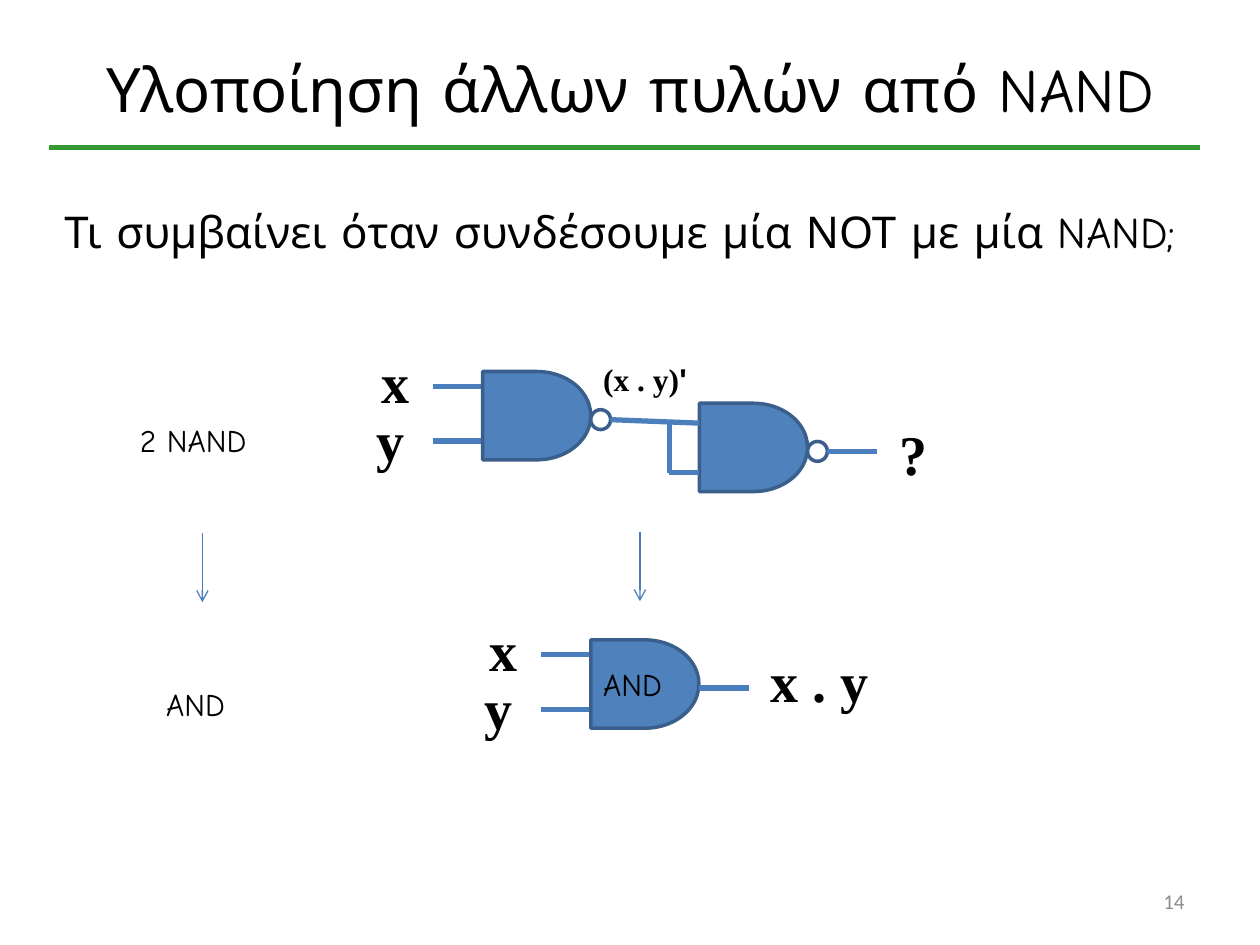
"""Build the slide on making an AND gate from two NAND gates."""
import pptx
import pptx.dml.color
import pptx.enum.shapes
import pptx.enum.text
import pptx.util
from pptx.oxml.xmlchemy import OxmlElement

Cm = pptx.util.Cm
RGBColor = pptx.dml.color.RGBColor
Shape = pptx.enum.shapes.MSO_SHAPE
Align = pptx.enum.text.PP_ALIGN
Anchor = pptx.enum.text.MSO_ANCHOR

BLACK = RGBColor(0x00, 0x00, 0x00)
WHITE = RGBColor(0xFF, 0xFF, 0xFF)
GRAY = RGBColor(0x8C, 0x8C, 0x8C)
GREEN = RGBColor(0x33, 0x99, 0x33)
GATE_FILL = RGBColor(0x4F, 0x81, 0xBD)
GATE_EDGE = RGBColor(0x3A, 0x5F, 0x8C)
WIRE = RGBColor(0x4B, 0x7E, 0xBC)

COMIC, SERIF = "Comic Neue", "Times New Roman"

HEADINGS = [
    ("Υλοποίηση άλλων πυλών από NAND", (1.27, 0.76, 22.86, 2.01), COMIC, 35, BLACK, Align.CENTER),
    ("Τι συμβαίνει όταν συνδέσουμε μία ΝΟΤ με μία NAND;", (0.99, 3.76, 23.01, 1.78),
     COMIC, 25, BLACK, Align.CENTER),
    ("14", (18.21, 17.65, 5.92, 1.02), "Calibri", 12, GRAY, Align.RIGHT),
]
CAPTIONS = [
    ("2 NAND", (2.57, 8.36, 3.05, 1.02)),
    ("AND", (3.1, 13.69, 1.96, 1.02)),
    ("AND", (11.91, 13.28, 1.96, 1.02)),
]
ARROWS = [((4.08, 10.74), (4.08, 12.14)), ((12.9, 10.72), (12.9, 12.12))]
NAND_GATE, NOT_GATE, AND_GATE = (9.73, 7.49), (14.1, 8.13), (11.91, 12.9)

GATE_W, GATE_H, BUBBLE, STUB = 2.18, 1.78, 0.4, 1
INPUT_Y, OUTPUT_Y = (0.3, 1.4), 0.97
NOT_INPUT_Y = (0.4, 1.4)
INPUT_LABELS = [("y", -2.39, 0.56), ("x", -2.29, -0.61)]
BRANCH_X = 13.49

deck = pptx.Presentation()
deck.slide_width, deck.slide_height = Cm(25.4), Cm(19.05)
slide = deck.slides.add_slide(deck.slide_layouts[6])


def add_text(runs, box, size, color=BLACK, bold=False, align=Align.LEFT, wrap=False):
    frame = slide.shapes.add_textbox(*map(Cm, box)).text_frame
    frame.word_wrap = wrap
    if wrap:
        frame.vertical_anchor = Anchor.MIDDLE
    else:
        frame.auto_size = pptx.enum.text.MSO_AUTO_SIZE.SHAPE_TO_FIT_TEXT
    paragraph = frame.paragraphs[0]
    paragraph.alignment = align
    for words, face in runs:
        run = paragraph.add_run()
        run.text = words
        run.font.name, run.font.size, run.font.bold = face, pptx.util.Pt(size), bold
        run.font.color.rgb = color


def add_signal(name, left, top, width):
    add_text([(name, SERIF)], (left, top, width, 1.63), 32, bold=True)


def add_line(start, end, color=WIRE, weight=3, arrow=False):
    line = slide.shapes.add_connector(
        pptx.enum.shapes.MSO_CONNECTOR.STRAIGHT, *map(Cm, start + end))
    line.line.color.rgb, line.line.width = color, pptx.util.Pt(weight)
    if arrow:
        tail = OxmlElement("a:tailEnd")
        tail.set("type", "arrow")
        line.line._get_or_add_ln().append(tail)
    line._element.spPr.append(OxmlElement("a:effectLst"))


def add_symbol(kind, left, top, width, height, fill):
    symbol = slide.shapes.add_shape(kind, *map(Cm, (left, top, width, height)))
    symbol.shadow.inherit = False
    symbol.fill.solid()
    symbol.fill.fore_color.rgb = fill
    symbol.line.color.rgb, symbol.line.width = GATE_EDGE, pptx.util.Pt(2)


def add_gate(corner, inverted):
    left, top = corner
    add_symbol(Shape.FLOWCHART_DELAY, left, top, GATE_W, GATE_H, GATE_FILL)
    output_x, output_y = left + GATE_W, top + OUTPUT_Y
    if inverted:
        add_symbol(Shape.FLOWCHART_CONNECTOR, output_x, output_y - BUBBLE / 2,
                   BUBBLE, BUBBLE, WHITE)
        output_x += BUBBLE
    return output_x, output_y


def add_inputs(corner):
    left, top = corner
    for offset in INPUT_Y:
        add_line((left - STUB, top + offset), (left, top + offset))
    for name, dx, dy in INPUT_LABELS:
        add_signal(name, left + dx, top + dy, 1.09)


def add_output(start, name, label_dy, label_width):
    x, y = start
    add_line(start, (x + STUB, y))
    add_signal(name, x + STUB + 0.2, y + label_dy, label_width)


for words, box, face, size, color, align in HEADINGS:
    add_text([(words, face)], box, size, color, align=align, wrap=True)
add_line((0.99, 2.98), (24.2, 2.98), GREEN)

for gate in (NAND_GATE, AND_GATE):
    add_inputs(gate)
nand_output = add_gate(NAND_GATE, inverted=True)
not_output = add_gate(NOT_GATE, inverted=True)
and_output = add_gate(AND_GATE, inverted=False)

upper_y, lower_y = (NOT_GATE[1] + offset for offset in NOT_INPUT_Y)
add_line(nand_output, (NOT_GATE[0], upper_y))
add_line((BRANCH_X, upper_y), (BRANCH_X, lower_y))
add_line((BRANCH_X, lower_y), (NOT_GATE[0], lower_y))
add_output(not_output, "?", -0.77, 0.99)
add_output(and_output, "x . y", -0.97, 2.49)
add_text([("(x . y)", SERIF), ("ʹ", "Arial")], (11.91, 7.14, 2.29, 1.02), 18, bold=True)

for words, box in CAPTIONS:
    add_text([(words, COMIC)], box, 18)
for start, end in ARROWS:
    add_line(start, end, weight=0.75, arrow=True)

deck.save("out.pptx")
